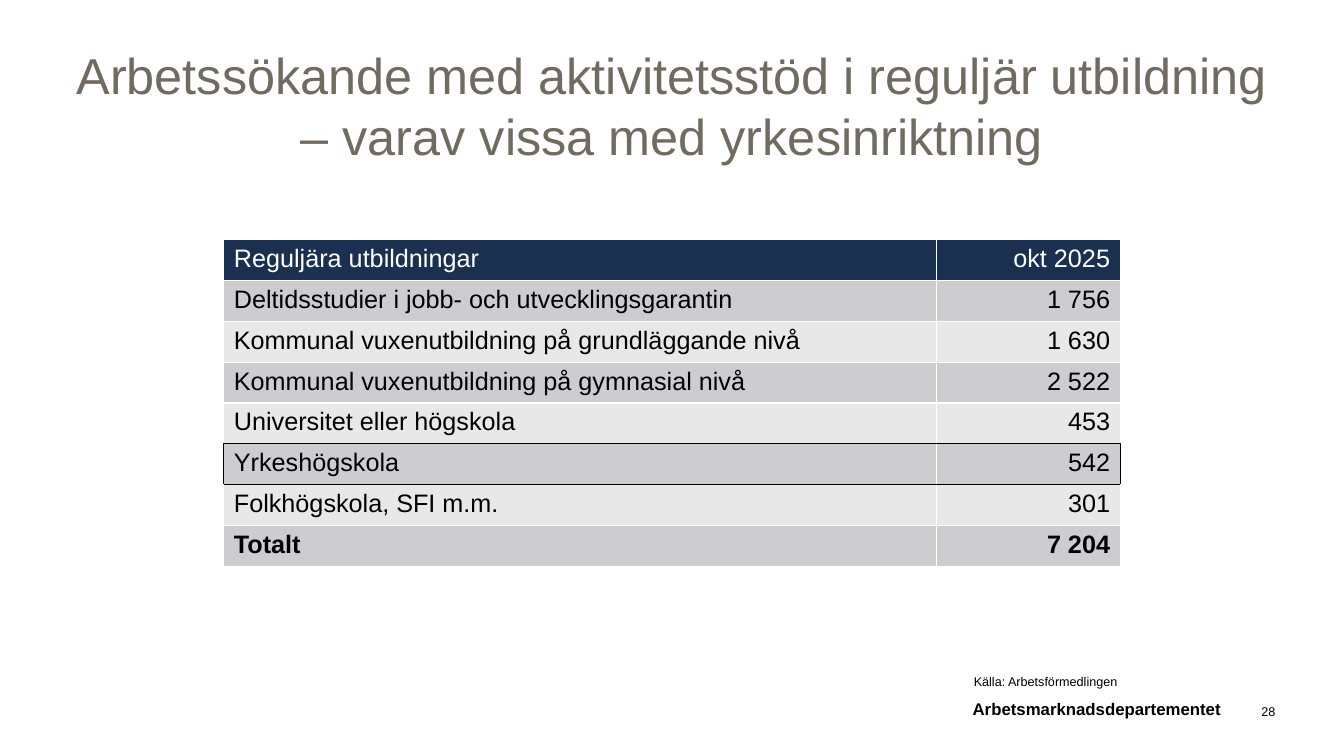
from dataclasses import dataclass

from lxml import etree
from pptx import Presentation
from pptx.dml.color import RGBColor
from pptx.enum.text import MSO_ANCHOR, PP_ALIGN
from pptx.oxml.ns import qn
from pptx.util import Inches, Pt

LEFT, CENTER, RIGHT = PP_ALIGN.LEFT, PP_ALIGN.CENTER, PP_ALIGN.RIGHT
TOP, BOTTOM = MSO_ANCHOR.TOP, MSO_ANCHOR.BOTTOM


@dataclass(frozen=True)
class Theme:
    font: str = "Arial"
    title: str = "716B5F"
    text: str = "000000"
    white: str = "FFFFFF"
    header: str = "1A3050"
    bands: tuple = ("CDCDD0", "E8E8E9")
    title_size: int = 36
    table_size: int = 18
    footer_size: int = 12
    small_size: int = 9


theme = Theme()


def set_text(tf, text, size, color, align, bold=False):
    p = tf.paragraphs[0]
    p.text = text
    p.alignment = align
    p.font.name = theme.font
    p.font.size = Pt(size)
    p.font.bold = bold
    p.font.color.rgb = RGBColor.from_string(color)


def add_border(cell, side, color):
    ln = etree.SubElement(cell._tc.get_or_add_tcPr(), qn(f"a:ln{side}"), w=str(Pt(1)))
    fill = etree.SubElement(ln, qn("a:solidFill"))
    etree.SubElement(fill, qn("a:srgbClr"), val=color)


prs = Presentation()
prs.slide_width = Inches(13.33)
prs.slide_height = Inches(7.5)
s = prs.slides.add_slide(prs.slide_layouts[6])

texts = [
    ("Arbetssökande med aktivitetsstöd i reguljär utbildning – varav vissa med yrkesinriktning",
     (0.68, 0.39, 11.97, 1.48), (0, 0.05), theme.title_size, theme.title, CENTER, TOP, False),
    ("Arbetsmarknadsdepartementet",
     (3.29, 6.89, 8.82, 0.24), (0, 0), theme.footer_size, theme.text, RIGHT, BOTTOM, True),
    ("28",
     (12.12, 6.89, 0.53, 0.24), (0, 0), theme.small_size, theme.text, RIGHT, BOTTOM, False),
    ("Källa: Arbetsförmedlingen",
     (9.56, 6.64, 2.67, 0.25), (0.1, 0.05), theme.small_size, theme.text, LEFT, TOP, False),
]
for text, box, (inset_x, inset_y), size, color, align, anchor, bold in texts:
    tf = s.shapes.add_textbox(*map(Inches, box)).text_frame
    tf.word_wrap = True
    tf.vertical_anchor = anchor
    tf.margin_left = tf.margin_right = Inches(inset_x)
    tf.margin_top = tf.margin_bottom = Inches(inset_y)
    set_text(tf, text, size, color, align, bold)

rows = [
    ("Reguljära utbildningar", "okt 2025"),
    ("Deltidsstudier i jobb- och utvecklingsgarantin", "1 756"),
    ("Kommunal vuxenutbildning på grundläggande nivå", "1 630"),
    ("Kommunal vuxenutbildning på gymnasial nivå", "2 522"),
    ("Universitet eller högskola", "453"),
    ("Yrkeshögskola", "542"),
    ("Folkhögskola, SFI m.m.", "301"),
    ("Totalt", "7 204"),
]
framed_row = 5
total_row = len(rows) - 1

table = s.shapes.add_table(len(rows), 2, Inches(2.22), Inches(2.38),
                           Inches(8.89), Inches(3.24)).table
table.columns[0].width = Inches(7.07)
table.columns[1].width = Inches(1.82)

for i, row in enumerate(rows):
    for j, text in enumerate(row):
        cell = table.cell(i, j)
        framed = {
            "L": i == framed_row and j == 0,
            "R": i == framed_row and j == 1,
            "T": i in (framed_row, framed_row + 1),
            "B": i in (framed_row - 1, framed_row),
        }
        for side, dark in framed.items():
            add_border(cell, side, theme.text if dark else theme.white)
        fill = theme.header if i == 0 else theme.bands[(i - 1) % 2]
        cell.fill.solid()
        cell.fill.fore_color.rgb = RGBColor.from_string(fill)
        set_text(cell.text_frame, text, theme.table_size,
                 theme.white if i == 0 else theme.text,
                 RIGHT if j else LEFT, i == total_row)

prs.save("out.pptx")
